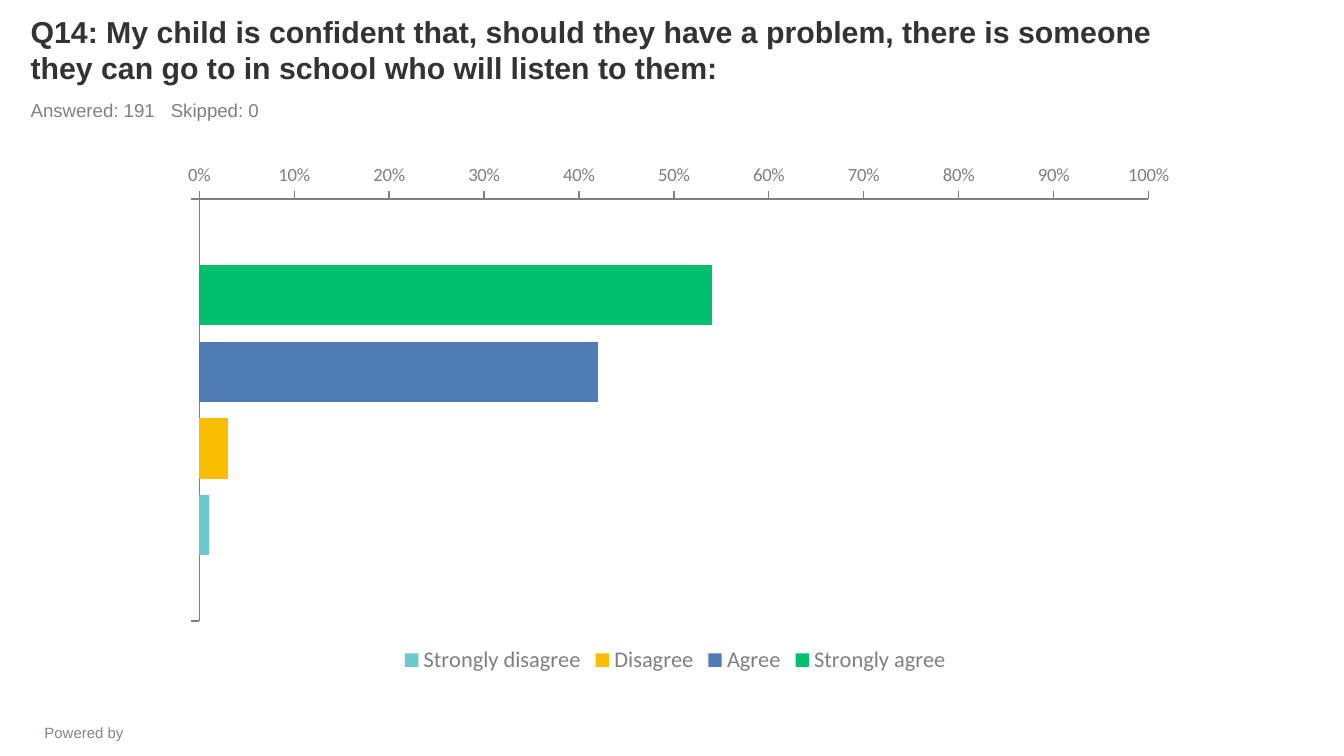
from dataclasses import dataclass

from lxml import etree
from pptx import Presentation
from pptx.chart.data import CategoryChartData
from pptx.dml.color import RGBColor
from pptx.enum.chart import (XL_AXIS_CROSSES, XL_CHART_TYPE, XL_LEGEND_POSITION,
                             XL_TICK_LABEL_POSITION, XL_TICK_MARK)
from pptx.enum.text import MSO_ANCHOR, PP_ALIGN
from pptx.oxml.ns import qn
from pptx.util import Cm, Pt

LEFT, CENTER = PP_ALIGN.LEFT, PP_ALIGN.CENTER
TOP, BASE = MSO_ANCHOR.TOP, MSO_ANCHOR.BOTTOM
BARS = XL_CHART_TYPE.BAR_CLUSTERED
BELOW = XL_LEGEND_POSITION.BOTTOM
LOW = XL_TICK_LABEL_POSITION.LOW
OUT, NONE = XL_TICK_MARK.OUTSIDE, XL_TICK_MARK.NONE
MAX = XL_AXIS_CROSSES.MAXIMUM


@dataclass(frozen=True)
class Theme:
    font: str = "Arial"
    chart_font: str = "Calibri"
    ink: str = "333333"
    muted: str = "808080"
    axis: str = "7F7F7F"
    credit: str = "7C878E"
    title_size: float = 16.2
    sub_size: float = 10
    foot_size: float = 8
    chart_size: float = 18
    tick_size: float = 10
    legend_size: float = 12


@dataclass(frozen=True)
class Label:
    text: str
    box: tuple[float, float, float, float]
    size: float
    color: str
    bold: bool = False
    align: PP_ALIGN = LEFT
    anchor: MSO_ANCHOR = TOP
    tab: float = 0


@dataclass(frozen=True)
class Answer:
    name: str
    share: float
    color: str


THEME = Theme()
LABELS = [
    Label("Powered by", (0.13, 13.56, 2.92, 0.46), THEME.foot_size,
          THEME.credit, align=CENTER),
    Label("Q14: My child is confident that, should they have a problem, there is "
          "someone they can go to in school who will listen to them:",
          (0.33, 0.23, 22.86, 1.52), THEME.title_size, THEME.ink,
          bold=True, anchor=BASE),
    Label("Answered: 191\tSkipped: 0", (0.33, 1.75, 22.86, 0.66),
          THEME.sub_size, THEME.muted, tab=2.65),
]
CHART_BOX = (3.05, 2.92, 19.43, 9.91)
ANSWERS = [
    Answer("Strongly agree", 0.54, "00BF6F"),
    Answer("Agree", 0.42, "507CB6"),
    Answer("Disagree", 0.03, "F9BE00"),
    Answer("Strongly disagree", 0.01, "6BC8CD"),
]


def set_font(font, size: float, color: str, name: str) -> None:
    font.size = Pt(size)
    font.name = name
    font.color.rgb = RGBColor.from_string(color)


def add_tab(para, place: float) -> None:
    """Give the paragraph one left tab stop, in centimetres."""
    stops = etree.SubElement(para._p.get_or_add_pPr(), qn("a:tabLst"))
    etree.SubElement(stops, qn("a:tab"), pos=str(Cm(place)), algn="l")


def add_label(slide, label: Label) -> None:
    frame = slide.shapes.add_textbox(*map(Cm, label.box)).text_frame
    frame.word_wrap = True
    frame.vertical_anchor = label.anchor
    frame.text = label.text
    para = frame.paragraphs[0]
    para.alignment = label.align
    if label.tab:
        add_tab(para, label.tab)
    for run in para.runs:
        set_font(run.font, label.size, label.color, THEME.font)
        run.font.bold = label.bold


def style_axis(axis) -> None:
    axis.has_major_gridlines = False
    axis.major_tick_mark = OUT
    axis.minor_tick_mark = NONE
    axis.format.line.width = Pt(0.75)
    axis.format.line.color.rgb = RGBColor.from_string(THEME.axis)
    set_font(axis.tick_labels.font, THEME.tick_size, THEME.axis, THEME.chart_font)


def add_bars(slide, answers: list[Answer]) -> None:
    data = CategoryChartData(number_format="0%")
    data.categories = [" "]
    for answer in answers:
        data.add_series(answer.name, [answer.share])
    chart = slide.shapes.add_chart(BARS, *map(Cm, CHART_BOX), data).chart
    chart.has_title = False
    set_font(chart.font, THEME.chart_size, THEME.ink, THEME.chart_font)

    plot = chart.plots[0]
    plot.gap_width = 219
    plot.overlap = -27
    plot.vary_by_categories = False
    for series, answer in zip(plot.series, answers):
        series.format.fill.solid()
        series.format.fill.fore_color.rgb = RGBColor.from_string(answer.color)

    groups, scale = chart.category_axis, chart.value_axis
    for axis in (groups, scale):
        style_axis(axis)
    groups.reverse_order = True
    groups.crosses = MAX
    groups.tick_label_position = LOW
    scale.minimum_scale, scale.maximum_scale = 0, 1
    scale.major_unit = 0.1
    scale.tick_labels.number_format = "0%"
    scale.tick_labels.number_format_is_linked = False

    chart.has_legend = True
    chart.legend.position = BELOW
    chart.legend.include_in_layout = False
    set_font(chart.legend.font, THEME.legend_size, THEME.axis, THEME.chart_font)


def main() -> None:
    deck = Presentation()
    deck.slide_width, deck.slide_height = Cm(25.4), Cm(14.29)
    slide = deck.slides.add_slide(deck.slide_layouts[6])
    for label in LABELS:
        add_label(slide, label)
    add_bars(slide, ANSWERS)
    deck.save("out.pptx")


if __name__ == "__main__":
    main()
